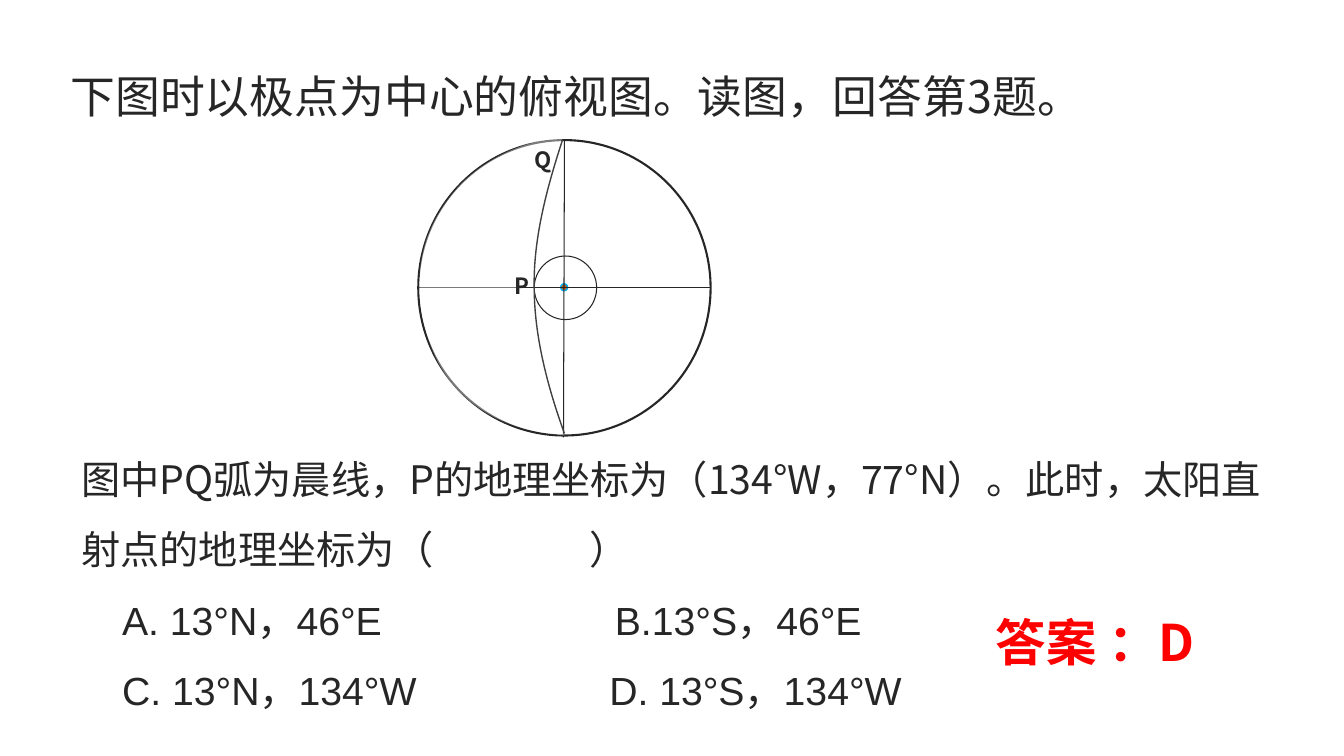
from dataclasses import dataclass

from lxml import etree
from pptx import Presentation
from pptx import util as u
from pptx.dml.color import RGBColor
from pptx.enum import shapes, text
from pptx.oxml.ns import qn


@dataclass(frozen=True)
class Theme:
    ink: str = "262626"
    arc: str = "404040"
    paper: str = "FFFFFF"
    answer: str = "FF0000"
    pole: str = "C25C17"
    pole_rim: str = "00B0F0"
    cjk: str = "Noto Sans CJK SC"
    latin: str = "Arial"
    title: int = 32
    body: int = 28
    result: int = 36
    label: int = 16


class Board:
    """Holds the theme and the slide being drawn."""

    def __init__(self, slide, theme):
        self.slide, self.theme = slide, theme
        self.diagram = None

    def paragraph(self, p, words, size, color=None, font=None, bold=False,
                  spacing=1.0, tabs=()):
        p.text = words
        p.alignment = text.PP_ALIGN.LEFT
        p.line_spacing = spacing
        p.space_before = u.Pt(0)
        p.font.size, p.font.bold = u.Pt(size), bold
        p.font.color.rgb = RGBColor.from_string(color or self.theme.ink)
        p.font.name = font or self.theme.cjk
        # East Asian font and tab stops
        defaults = p._p.get_or_add_pPr().find(qn("a:defRPr"))
        etree.SubElement(defaults, qn("a:ea"), typeface=self.theme.cjk)
        if tabs:
            stops = etree.Element(qn("a:tabLst"))
            for tab in tabs:
                etree.SubElement(stops, qn("a:tab"), pos=str(u.Pt(tab)), algn="l")
            defaults.addprevious(stops)

    def fill_frame(self, sp, rows, wrap=True):
        tf = sp.text_frame
        tf.word_wrap = wrap
        tf.auto_size = text.MSO_AUTO_SIZE.NONE
        tf.vertical_anchor = text.MSO_ANCHOR.TOP
        for i, row in enumerate(rows):
            p = tf.add_paragraph() if i else tf.paragraphs[0]
            self.paragraph(p, **row)

    def title(self, box, words):
        sp = self.slide.shapes.title
        sp.left, sp.top, sp.width, sp.height = map(u.Pt, box)
        self.fill_frame(sp, [dict(words=words, size=self.theme.title, spacing=1.5)])

    def textbox(self, box, *rows, wrap=True):
        self.fill_frame(self.slide.shapes.add_textbox(*map(u.Pt, box)), rows, wrap)

    def start_diagram(self):
        self.diagram = self.slide.shapes.add_group_shape().shapes

    def style(self, sp, fill=None, line=None, width=0.75):
        sp.shadow.inherit = False
        if fill:
            sp.fill.solid()
            sp.fill.fore_color.rgb = RGBColor.from_string(fill)
        else:
            sp.fill.background()
        if line:
            sp.line.color.rgb = RGBColor.from_string(line)
            sp.line.width = u.Pt(width)
        else:
            sp.line.fill.background()

    def ellipse(self, box, **look):
        sp = self.diagram.add_shape(shapes.MSO_SHAPE.OVAL, *map(u.Pt, box))
        self.style(sp, **look)

    def line(self, *ends):
        cx = self.diagram.add_connector(shapes.MSO_CONNECTOR.STRAIGHT, *map(u.Pt, ends))
        cx.line.color.rgb = RGBColor.from_string(self.theme.ink)
        cx.line.width = u.Pt(0.75)
        etree.SubElement(cx._element.spPr, qn("a:effectLst"))

    def curve(self, start, beziers, closed=False, alpha=None, **look):
        def grid(point):
            return tuple(round(v * 100) for v in point)

        anchors = [grid(start)] + [grid(bezier[-1]) for bezier in beziers]
        builder = self.diagram.build_freeform(*anchors[0], scale=u.Pt(1) / 100)
        builder.add_line_segments(anchors[1:], close=closed)
        sp = builder.convert_to_shape()
        self.style(sp, **look)
        # Bend each straight segment into its cubic curve
        left, top = (min(values) for values in zip(*anchors))
        segments = list(sp._element.iter(qn("a:lnTo")))
        for segment, bezier in zip(segments, beziers):
            bend = etree.Element(qn("a:cubicBezTo"))
            for x, y in map(grid, bezier):
                etree.SubElement(bend, qn("a:pt"), x=str(x - left), y=str(y - top))
            segment.getparent().replace(segment, bend)
        if alpha:
            color = sp._element.spPr.find(qn("a:solidFill"))[0]
            etree.SubElement(color, qn("a:alpha"), val=str(alpha * 1000))


def main():
    prs = Presentation()
    prs.slide_width, prs.slide_height = u.Pt(960), u.Pt(540)
    theme = Theme()
    board = Board(prs.slides.add_slide(prs.slide_layouts[5]), theme)

    # Introduction, then the question with its options on tab stops
    board.title((43.2, 26.5, 842.4, 65.5), "下图时以极点为中心的俯视图。读图，回答第3题。")
    option = dict(size=theme.body, font=theme.latin, spacing=1.5)
    board.textbox(
        (51.1, 304.6, 872.6, 211),
        dict(words="图中PQ弧为晨线，P的地理坐标为（134°W，77°N）。此时，太阳直射点的地理坐标为（\t）",
             size=theme.body, spacing=1.5, tabs=(363,)),
        dict(words="\tA. 13°N，46°E\tB.13°S，46°E", tabs=(29, 381), **option),
        dict(words="\tC. 13°N，134°W\tD. 13°S，134°W", tabs=(29, 377), **option))

    # Polar view: globe, parallel of P, pole and meridians
    board.start_diagram()
    board.ellipse((298.8, 100.1, 208.8, 211), fill=theme.paper, line=theme.ink, width=1.5)
    board.ellipse((381.6, 182.9, 44.6, 45.4), line=theme.ink)
    board.ellipse((400.5, 202.7, 5, 5), fill=theme.pole, line=theme.pole_rim, width=1)
    board.line(298.8, 205.2, 507.6, 205.2)
    board.line(403.2, 100.1, 402.5, 312.5)

    # Pale half of the globe and the morning line
    board.curve((403.2, 311), [
        ((367.2, 308.2), (344.9, 296.6), (326.9, 278.6)),
        ((309.6, 260.6), (299.5, 229.7), (299.5, 205.2)),
        ((299.5, 181.4), (305.3, 158.4), (327.6, 133.2)),
        ((341.3, 118.8), (365.8, 101.5), (402.5, 97.9)),
        ((389.5, 122.4), (385.9, 131.8), (380.2, 149)),
        ((373.7, 170.6), (371.5, 187.9), (371.5, 207.4)),
        ((372.2, 226.8), (377.3, 252), (385.9, 271.4)),
        ((392.4, 290.2), (396.7, 295.9), (403.2, 311)),
    ], closed=True, alpha=39, fill=theme.paper)
    board.curve((401.8, 100.1), [
        ((391, 133.2), (380.9, 169.9), (381.6, 205.2)),
        ((381.6, 239.8), (391, 275.8), (403.2, 309.6)),
    ], line=theme.arc, width=1)

    # Answer and point labels
    board.textbox((704.2, 432.7, 165.6, 51.1), dict(
        words="答案 ：D", size=theme.result, color=theme.answer, bold=True))
    for name, box in (("Q", (374.6, 100.8, 33.8, 48.2)), ("P", (360.7, 190.8, 31, 41.8))):
        board.textbox(box, dict(words=name, size=theme.label, bold=True), wrap=False)

    prs.save("out.pptx")


if __name__ == "__main__":
    main()
